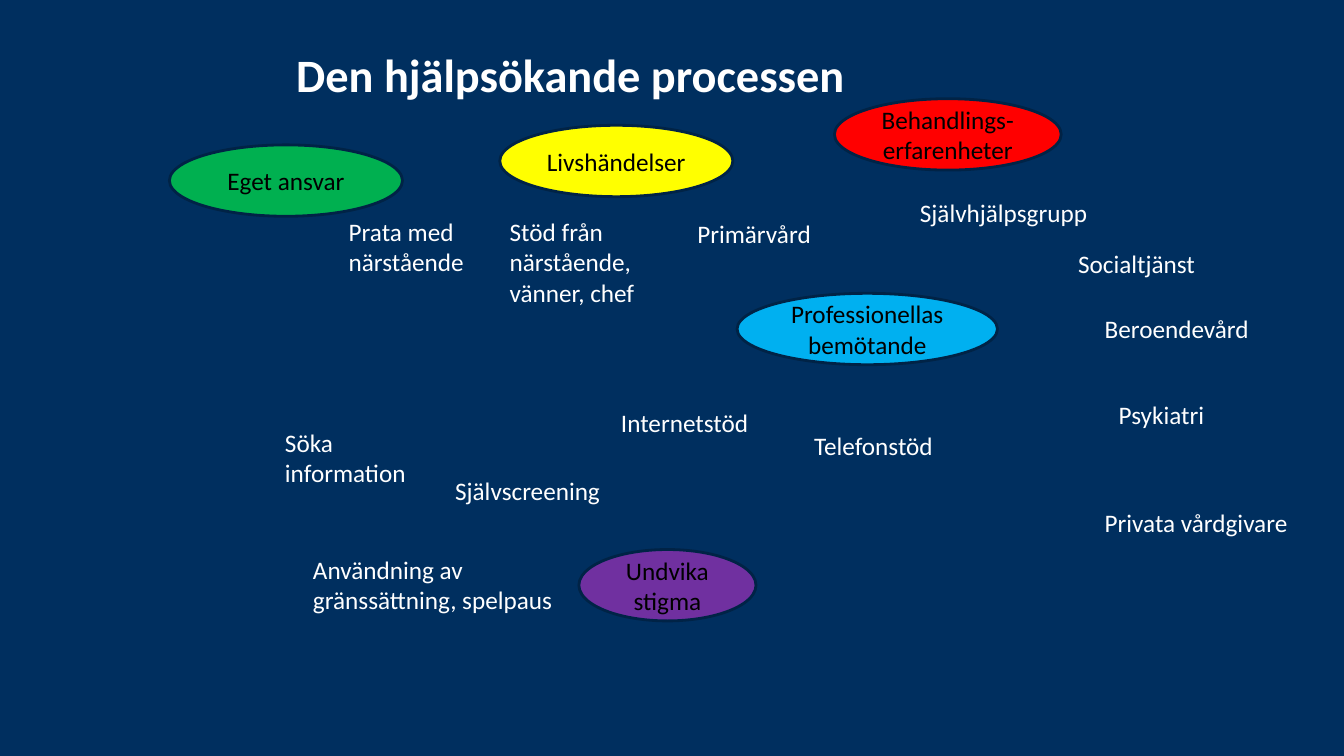
from dataclasses import dataclass

from pptx import Presentation
from pptx.dml.color import RGBColor
from pptx.enum.shapes import MSO_SHAPE
from pptx.enum.text import MSO_ANCHOR, MSO_AUTO_SIZE, PP_ALIGN
from pptx.util import Pt

OVAL = MSO_SHAPE.OVAL
RECTANGLE = MSO_SHAPE.RECTANGLE
TOP, MIDDLE = MSO_ANCHOR.TOP, MSO_ANCHOR.MIDDLE
LEFT, CENTER = PP_ALIGN.LEFT, PP_ALIGN.CENTER
GROW = MSO_AUTO_SIZE.SHAPE_TO_FIT_TEXT


@dataclass(frozen=True)
class Theme:
    """Colours and type sizes of the slide."""
    font: str = "Calibri"
    title_size: float = 33.1
    body_size: float = 18
    background: str = "002F5F"
    outline: str = "002346"
    light: str = "FFFFFF"
    dark: str = "000000"
    green: str = "00B050"
    yellow: str = "FFFF00"
    red: str = "FF0000"
    blue: str = "00B0F0"
    purple: str = "7030A0"


THEME = Theme()
ONE_LINE, TWO_LINES, THREE_LINES = 29, 51, 73
FACTOR_HEIGHT = 51

TITLE = ("Den hjälpsökande processen", (204.5, 29.5, 625.5, 62.5))
TALK = ("Prata med närstående", (242, 151, 102, TWO_LINES))
STEPS = [
    ("Söka information", (196.5, 301.5, 114, TWO_LINES)),
    ("Stöd från närstående, vänner, chef", (357, 151, 125, THREE_LINES)),
    ("Självscreening", (318, 336, 120, TWO_LINES)),
    ("Primärvård", (491, 152.5, 97, ONE_LINE)),
    ("Internetstöd", (436.5, 287.5, 114, ONE_LINE)),
    ("Telefonstöd", (574.5, 304, 114, ONE_LINE)),
    ("Självhjälpsgrupp", (650, 137.5, 215, ONE_LINE)),
    ("Användning av gränssättning, spelpaus", (216.5, 392.5, 196, TWO_LINES)),
    ("Socialtjänst", (763, 173.5, 134, ONE_LINE)),
    ("Beroendevård", (782, 220.5, 134, ONE_LINE)),
    ("Privata vårdgivare", (782, 358.5, 172, ONE_LINE)),
    ("Psykiatri", (792, 282, 134, ONE_LINE)),
]
FACTORS = [
    ("Undvika stigma", THEME.purple, (413.5, 392.5, 126.5)),
    ("Eget ansvar", THEME.green, (121, 103.5, 166.5)),
    ("Livshändelser", THEME.yellow, (357, 89.5, 166.5)),
    ("Behandlings-erfarenheter", THEME.red, (596, 70.5, 162)),
    ("Professionellas bemötande", THEME.blue, (526.5, 209.5, 186)),
]


def write(sp, text, size, color, align=LEFT, anchor=TOP, bold=False):
    """Put one formatted paragraph into a shape."""
    tf = sp.text_frame
    tf.word_wrap = True
    tf.vertical_anchor = anchor
    tf.text = text
    p = tf.paragraphs[0]
    p.alignment = align
    font = p.runs[0].font
    font.name = THEME.font
    font.size = Pt(size)
    font.bold = bold
    font.color.rgb = RGBColor.from_string(color)


def add_filled(slide, kind, box, fill, line, width):
    """Add a flat preset shape with the given fill and outline."""
    sp = slide.shapes.add_shape(kind, *map(Pt, box))
    sp.shadow.inherit = False
    sp.fill.solid()
    sp.fill.fore_color.rgb = RGBColor.from_string(fill)
    sp.line.color.rgb = RGBColor.from_string(line)
    sp.line.width = Pt(width)
    return sp


def add_title(slide, text, box):
    """Add the slide heading."""
    sp = slide.shapes.add_textbox(*map(Pt, box))
    write(sp, text, THEME.title_size, THEME.light, bold=True)


def add_panel(slide, text, box):
    """Add a step on a panel in the background colour."""
    sp = add_filled(slide, RECTANGLE, box, THEME.background, THEME.background, 0.75)
    write(sp, text, THEME.body_size, THEME.light)
    sp.text_frame.auto_size = GROW


def add_step(slide, text, box):
    """Add a plain step label."""
    sp = slide.shapes.add_textbox(*map(Pt, box))
    write(sp, text, THEME.body_size, THEME.light)
    sp.text_frame.auto_size = GROW


def add_factor(slide, text, fill, box):
    """Add a coloured oval that names an influencing factor."""
    sp = add_filled(slide, OVAL, box, fill, THEME.outline, 2)
    write(sp, text, THEME.body_size, THEME.dark, CENTER, MIDDLE)


def main():
    """Build and save the slide."""
    prs = Presentation()
    prs.slide_width, prs.slide_height = Pt(960), Pt(540)
    slide = prs.slides.add_slide(prs.slide_layouts[6])
    slide.background.fill.solid()
    slide.background.fill.fore_color.rgb = RGBColor.from_string(THEME.background)
    add_title(slide, *TITLE)
    add_panel(slide, *TALK)
    for text, box in STEPS:
        add_step(slide, text, box)
    for text, fill, place in FACTORS:
        add_factor(slide, text, fill, (*place, FACTOR_HEIGHT))
    prs.save("out.pptx")


if __name__ == "__main__":
    main()
